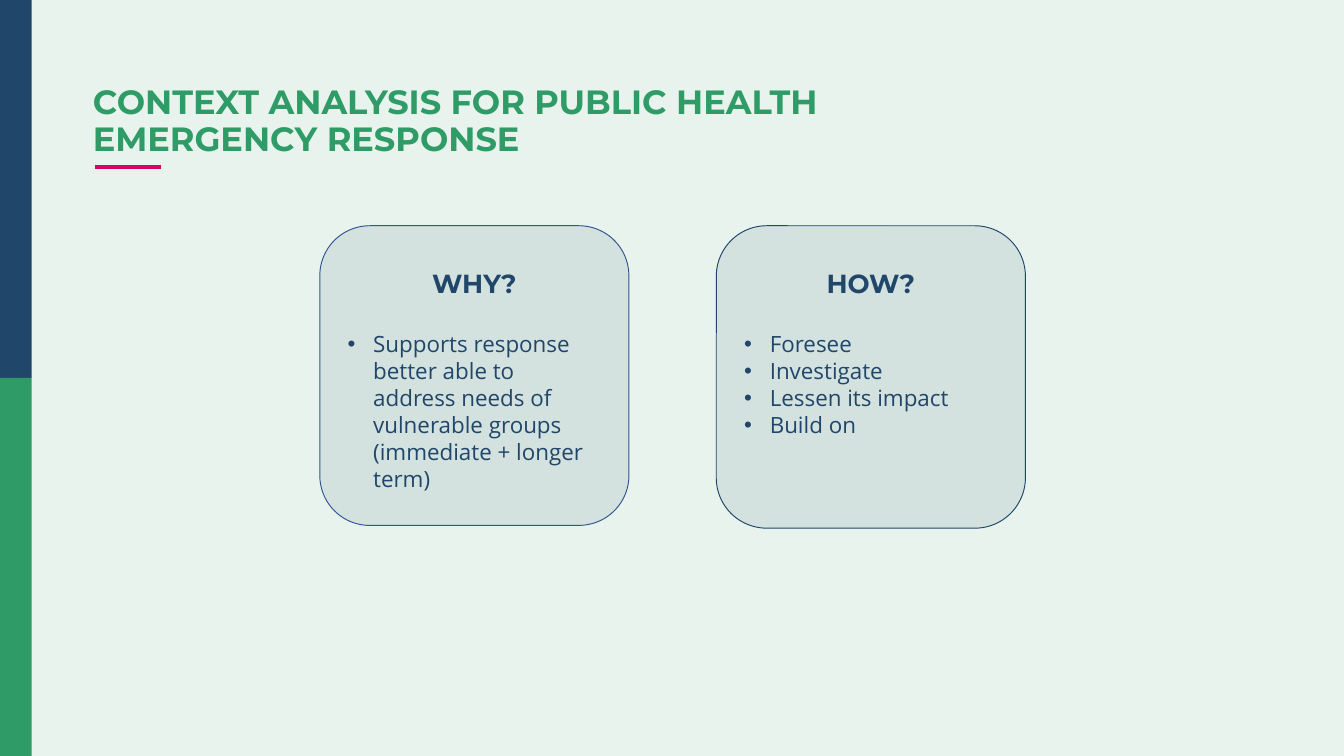
from lxml.etree import SubElement
from pptx import Presentation
from pptx.dml.color import RGBColor
from pptx.enum.shapes import MSO_CONNECTOR, MSO_SHAPE
from pptx.enum.text import MSO_ANCHOR, PP_ALIGN
from pptx.oxml.ns import qn
from pptx.util import Inches, Pt

# The slide is a grid of square cells, 100 columns wide, in the ratio 16:9.
SLIDE_INCHES = 10
COLUMNS = 100
ROWS = COLUMNS * 9 / 16
COLORS = {"navy": "204669", "green": "2F9C67", "pink": "D90368",
          "blue": "325491", "mint": "E8F3ED"}
HEADING_FONT, BODY_FONT = "Montserrat", "Open Sans"
CARDS = [
    ("WHY?", ["Supports response better able to address needs of "
              "vulnerable groups (immediate + longer term)"], "blue", 22.3),
    ("HOW?", ["Foresee", "Investigate", "Lessen its impact", "Build on"],
     "navy", 22.5),
]
CARD_LEFT, CARD_TOP, CARD_WIDTH, CARD_STEP = 23.8, 16.8, 23, 29.5


def cells(count):
    return Inches(count * SLIDE_INCHES / COLUMNS)


def rgb(name):
    return RGBColor.from_string(COLORS[name])


def add_block(slide, preset, box, fill, alpha=None, outline=None):
    block = slide.shapes.add_shape(preset, *map(cells, box))
    block.shadow.inherit = False
    block.fill.solid()
    block.fill.fore_color.rgb = rgb(fill)
    if alpha is not None:
        color = block._element.spPr.find(".//" + qn("a:srgbClr"))
        SubElement(color, qn("a:alpha"), val=str(alpha * 1000))
    if outline:
        block.line.color.rgb = rgb(outline)
        block.line.width = Pt(0.5)
    else:
        block.line.fill.background()
    return block


def set_margins(frame, left, top, right, bottom):
    frame.margin_left, frame.margin_top = cells(left), cells(top)
    frame.margin_right, frame.margin_bottom = cells(right), cells(bottom)
    frame.word_wrap = True
    frame.vertical_anchor = MSO_ANCHOR.TOP


def write(paragraph, text, font=BODY_FONT, size=12, color="navy", bold=False,
          align=PP_ALIGN.LEFT, bullet=False, before=0, spacing=None):
    if bullet:
        properties = paragraph._p.get_or_add_pPr()
        indent = cells(1.9)
        properties.set("marL", str(indent))
        properties.set("indent", str(-indent))
        SubElement(properties, qn("a:buFont"), typeface="Arial")
        SubElement(properties, qn("a:buChar"), char="•")
    paragraph.text = text
    paragraph.alignment = align
    if before:
        paragraph.space_before = Pt(before)
    if spacing:
        paragraph.line_spacing = spacing
    for run in paragraph.runs:
        run.font.name, run.font.size, run.font.bold = font, Pt(size), bold
        run.font.color.rgb = rgb(color)


def add_side_band(slide, left, top, width, height):
    half = height / 2
    for row, color in enumerate(("navy", "green")):
        add_block(slide, MSO_SHAPE.RECTANGLE,
                  (left, top + row * half, width, half), color)


def add_title(slide, left, top, width, height):
    title = slide.shapes.add_textbox(*map(cells, (left, top, width, height)))
    set_margins(title.text_frame, 0, 0.5, 1, 0.5)
    write(title.text_frame.paragraphs[0],
          "CONTEXT ANALYSIS FOR PUBLIC HEALTH \vEMERGENCY RESPONSE",
          font=HEADING_FONT, size=18, color="green", bold=True, spacing=0.9)
    rule_left, rule_top = left + 0.2, top + 6.5
    rule = slide.shapes.add_connector(
        MSO_CONNECTOR.STRAIGHT, cells(rule_left), cells(rule_top),
        cells(rule_left + 4.85), cells(rule_top))
    rule.line.color.rgb = rgb("pink")
    rule.line.width = Pt(2.25)
    SubElement(rule._element.spPr, qn("a:effectLst"))


def add_card(slide, box, heading, points, outline):
    card = add_block(slide, MSO_SHAPE.ROUNDED_RECTANGLE, box, "navy",
                     alpha=10, outline=outline)
    frame = card.text_frame
    set_margins(frame, 1, 2, 1, 0.5)
    write(frame.paragraphs[0], heading, font=HEADING_FONT, size=14,
          bold=True, align=PP_ALIGN.CENTER)
    for index, point in enumerate(points):
        write(frame.add_paragraph(), point, bullet=True,
              before=0 if index else 17)


def main():
    deck = Presentation()
    deck.slide_width, deck.slide_height = cells(COLUMNS), cells(ROWS)
    slide = deck.slides.add_slide(deck.slide_layouts[6])
    slide.background.fill.solid()
    slide.background.fill.fore_color.rgb = rgb("mint")
    add_side_band(slide, 0, 0, 2.36, ROWS)
    add_title(slide, 6.9, 5.9, 86.2, 3.7)
    for column, (heading, points, outline, height) in enumerate(CARDS):
        box = (CARD_LEFT + column * CARD_STEP, CARD_TOP, CARD_WIDTH, height)
        add_card(slide, box, heading, points, outline)
    deck.save("out.pptx")


if __name__ == "__main__":
    main()
